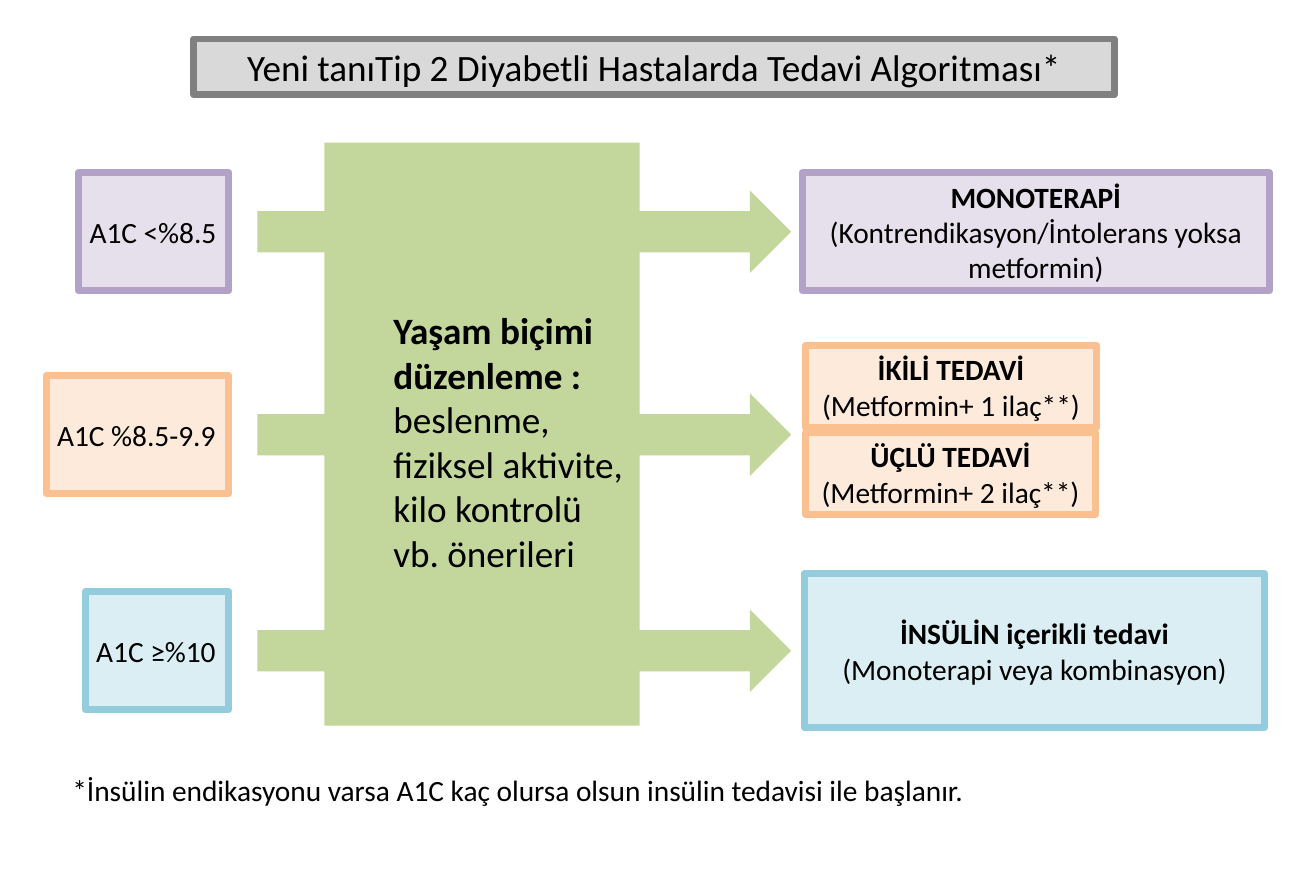
from pptx import Presentation
from pptx.dml.color import RGBColor
from pptx.enum.shapes import MSO_SHAPE
from pptx.enum.text import MSO_ANCHOR, PP_ALIGN
from pptx.util import Inches, Pt

RECT, ARROW = MSO_SHAPE.RECTANGLE, MSO_SHAPE.RIGHT_ARROW
TOP, MIDDLE = MSO_ANCHOR.TOP, MSO_ANCHOR.MIDDLE
LEFT, CENTER = PP_ALIGN.LEFT, PP_ALIGN.CENTER

HUES = {
    "ink": "000000", "green": "C3D69B",
    "gray": "D9D9D9", "gray edge": "808080",
    "plum": "E6E0EC", "plum edge": "B3A2C7",
    "peach": "FDEADA", "peach edge": "FAC090",
    "aqua": "DBEEF4", "aqua edge": "93CDDD",
}


def hue(name):
    return RGBColor.from_string(HUES[name])


def write(frame, text, size=19, lead=False, align=LEFT, wrap=True, anchor=MIDDLE):
    frame.word_wrap = wrap
    frame.vertical_anchor = anchor
    for i, line in enumerate(text.split("\n")):
        para = frame.paragraphs[0] if i == 0 else frame.add_paragraph()
        para.alignment = align
        run = para.add_run()
        run.text = line
        run.font.name = "Calibri"
        run.font.size = Pt(size)
        run.font.bold = lead and i == 0
        run.font.color.rgb = hue("ink")


class Chart:
    """Draws the slide on a grid of 100 columns by 100 rows, placing items by mid row."""

    def __init__(self, deck):
        self.col = deck.slide_width / 100
        self.row = deck.slide_height / 100
        self.shapes = deck.slides.add_slide(deck.slide_layouts[6]).shapes

    def area(self, left, mid, wide, high):
        return (round(left * self.col), round((mid - high / 2) * self.row),
                round(wide * self.col), round(high * self.row))

    def shape(self, kind, place, fill, edge=None):
        item = self.shapes.add_shape(kind, *self.area(*place))
        item.shadow.inherit = False
        item.fill.solid()
        item.fill.fore_color.rgb = hue(fill)
        if edge:
            item.line.color.rgb = hue(edge)
            item.line.width = Pt(4.5)
        else:
            item.line.fill.background()
        return item

    def box(self, text, place, tone, **style):
        item = self.shape(RECT, place, tone, tone + " edge")
        write(item.text_frame, text, **style)

    def arrow(self, mid):
        self.shape(ARROW, (19.56, mid, 40.56, 9.31), "green")

    def panel(self, text, place, indent, drop):
        frame = self.shape(RECT, place, "green").text_frame
        frame.margin_left = round(indent * self.col)
        frame.margin_top = round(drop * self.row)
        write(frame, text, size=24, lead=True, anchor=TOP)

    def note(self, text, place):
        write(self.shapes.add_textbox(*self.area(*place)).text_frame, text)


def main():
    deck = Presentation()
    deck.slide_width, deck.slide_height = Inches(11.81), Inches(7.95)
    chart = Chart(deck)

    chart.box("Yeni tanıTip 2 Diyabetli Hastalarda Tedavi Algoritması*",
              (14.73, 7.55, 69.94, 6.29), "gray", size=24, align=CENTER)

    edge = 17.4
    levels = [
        ("A1C <%8.5", 26.16, 11.43, "plum"),
        ("A1C %8.5-9.9", 49.06, 13.89, "peach"),
        ("A1C ≥%10", 73.46, 10.92, "aqua"),
    ]
    for text, mid, wide, tone in levels:
        chart.box(text, (edge - wide, mid, wide, 13.33), tone, wrap=False)
        chart.arrow(mid)

    chart.panel("Yaşam biçimi düzenleme :\nbeslenme,\nfiziksel aktivite,\n"
                "kilo kontrolü vb. önerileri",
                (24.64, 49, 23.96, 65.79), indent=5.25, drop=18.6)

    cares = [
        ("MONOTERAPİ\n(Kontrendikasyon/İntolerans yoksa metformin)",
         (60.97, 26.16, 35.48, 13.33), "plum"),
        ("İKİLİ TEDAVİ\n(Metformin+ 1 ilaç**)", (61.22, 43.65, 22.1, 9.31), "peach"),
        ("ÜÇLÜ TEDAVİ\n(Metformin+ 2 ilaç**)", (61.22, 53.46, 22.02, 9.31), "peach"),
        ("İNSÜLİN içerikli tedavi\n(Monoterapi veya kombinasyon)",
         (61.13, 73.46, 34.97, 17.36), "aqua"),
    ]
    for text, place, tone in cares:
        chart.box(text, place, tone, lead=True, align=CENTER)

    chart.note("*İnsülin endikasyonu varsa A1C kaç olursa olsun insülin tedavisi ile başlanır.",
               (4.66, 89.18, 91.53, 5.28))
    deck.save("out.pptx")


if __name__ == "__main__":
    main()
